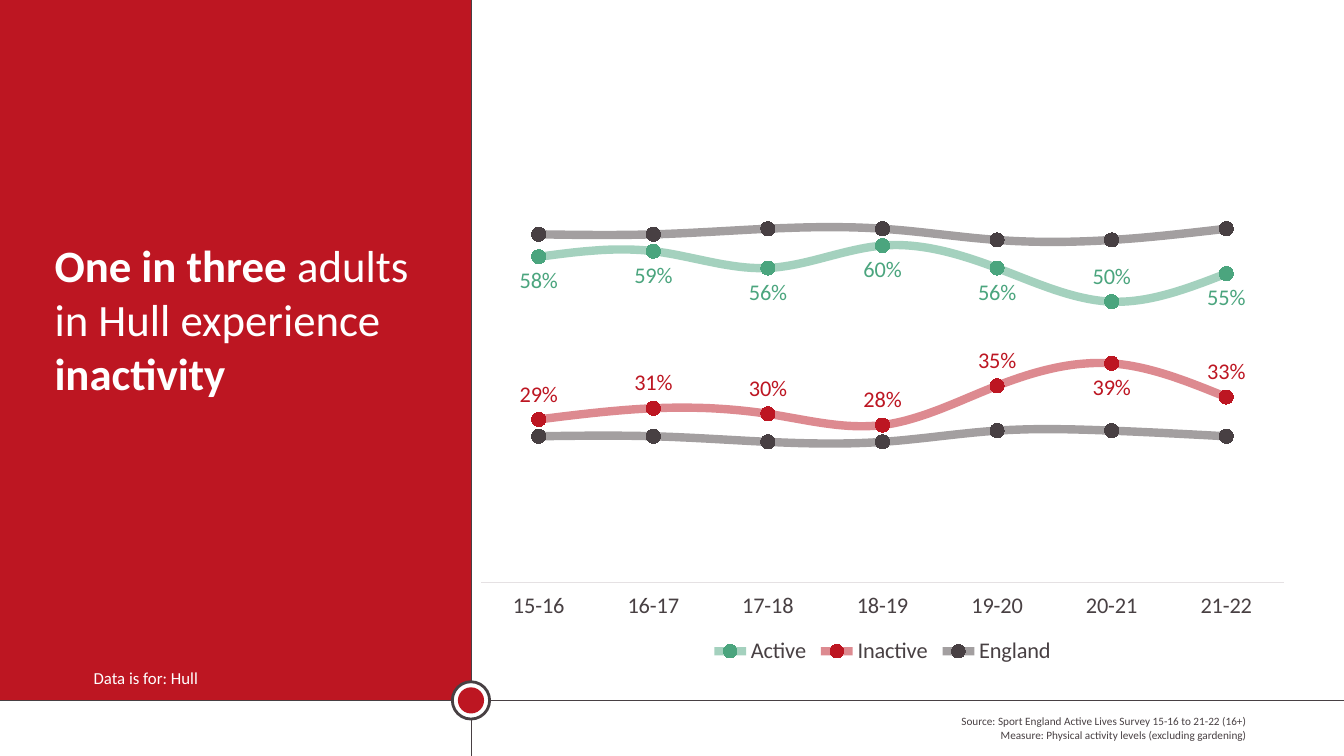
"""Build the Hull adult activity levels slide."""
from lxml.etree import SubElement
from pptx import Presentation
from pptx.chart.data import CategoryChartData
from pptx.dml.color import RGBColor
from pptx.enum.chart import (XL_CHART_TYPE, XL_LABEL_POSITION, XL_LEGEND_POSITION,
                             XL_MARKER_STYLE, XL_TICK_LABEL_POSITION, XL_TICK_MARK)
from pptx.enum.shapes import MSO_CONNECTOR, MSO_SHAPE
from pptx.enum.text import MSO_ANCHOR, MSO_AUTO_SIZE, PP_ALIGN
from pptx.oxml import parse_xml
from pptx.oxml.ns import nsdecls, qn
from pptx.util import Cm, Pt

COLORS = {"red": "BD1622", "green": "4BA57E", "dark": "484043",
          "pale": "E5E1E3", "white": "FFFFFF"}
FONT = "Calibri"
WIDTH, HEIGHT = 33.87, 19.05
CROSS_X, CROSS_Y = 11.87, 17.65

HEADLINE = [("One in three ", True), ("adults in Hull experience ", False),
            ("inactivity", True)]
NOTES = [
    (["Source: Sport England Active Lives Survey 15-16 to 21-22 (16+)",
      "Measure: Physical activity levels (excluding gardening)"],
     (15.24, 17.88, 16.43, 0.94), 8, "dark", PP_ALIGN.RIGHT),
    (["Data is for: Hull"], (2.11, 16.71, 9.22, 0.76), 12, "white", PP_ALIGN.LEFT),
]
RULES = [(CROSS_X, 0, CROSS_X, HEIGHT), (0, CROSS_Y, WIDTH, CROSS_Y)]
RINGS = [(0.94, "white", "dark"), (0.66, "red", None)]

YEARS = ["15-16", "16-17", "17-18", "18-19", "19-20", "20-21", "21-22"]
ABOVE, BELOW = XL_LABEL_POSITION.ABOVE, XL_LABEL_POSITION.BELOW
SERIES = [
    ("Active", [0.58, 0.59, 0.56, 0.6, 0.56, 0.5, 0.55], "green", (BELOW, ABOVE)),
    ("Inactive", [0.29, 0.31, 0.3, 0.28, 0.35, 0.39, 0.33], "red", (ABOVE, BELOW)),
    ("England", [0.26, 0.26, 0.25, 0.25, 0.27, 0.27, 0.26], "dark", None),
    ("Series 4", [0.62, 0.62, 0.63, 0.63, 0.61, 0.61, 0.63], "dark", None),
]
FLIPPED_POINT = YEARS.index("20-21")
UNLISTED_SERIES = 3
PLOT_AREA = {"x": 0, "y": 0.01, "w": 1, "h": 0.82}


def rgb(name):
    return RGBColor.from_string(COLORS[name])


def set_values(target, values):
    for name, value in values.items():
        setattr(target, name, value)


def style_font(font, size, color, bold=False):
    set_values(font, {"name": FONT, "size": Pt(size), "bold": bold})
    font.color.rgb = rgb(color)


def add_filled(slide, kind, box, fill, outline=None):
    shape = slide.shapes.add_shape(kind, *map(Cm, box))
    shape.shadow.inherit = False
    shape.fill.solid()
    shape.fill.fore_color.rgb = rgb(fill)
    if outline:
        shape.line.color.rgb = rgb(outline)
        shape.line.width = Pt(2)
    else:
        shape.line.fill.background()


def add_backdrop(slide):
    add_filled(slide, MSO_SHAPE.RECTANGLE, (0, 0, CROSS_X, CROSS_Y), "red")
    for ends in RULES:
        rule = slide.shapes.add_connector(MSO_CONNECTOR.STRAIGHT, *map(Cm, ends))
        rule.line.color.rgb = rgb("dark")
        rule.line.width = Pt(0.5)
        SubElement(rule.element.spPr, qn("a:effectLst"))
    for diameter, fill, outline in RINGS:
        corner = (CROSS_X - diameter / 2, CROSS_Y - diameter / 2)
        add_filled(slide, MSO_SHAPE.OVAL, (*corner, diameter, diameter), fill, outline)


def add_note(slide, lines, box, size, color, alignment):
    frame = slide.shapes.add_textbox(*map(Cm, box)).text_frame
    frame.word_wrap = True
    frame.text = "\n".join(lines)
    for paragraph in frame.paragraphs:
        paragraph.alignment = alignment
        style_font(paragraph.font, size, color)


def fill_title(slide):
    title = slide.shapes.title
    set_values(title, {"left": Cm(1.12), "top": Cm(5.87),
                       "width": Cm(9.45), "height": Cm(8.61)})
    set_values(title.text_frame, {"word_wrap": True, "auto_size": MSO_AUTO_SIZE.NONE,
                                  "vertical_anchor": MSO_ANCHOR.TOP})
    paragraph = title.text_frame.paragraphs[0]
    paragraph.alignment = PP_ALIGN.LEFT
    for text, bold in HEADLINE:
        run = paragraph.add_run()
        run.text = text
        style_font(run.font, 32, "white", bold)
    title.element.getparent().append(title.element)


def style_series(series, color, positions):
    series.smooth = True
    series.format.line.color.rgb = rgb(color)
    series.format.line.width = Pt(6)
    line_color = next(series.format.line.fill._xPr.iter(qn("a:srgbClr")))
    SubElement(line_color, qn("a:alpha"), val="50000")
    set_values(series.marker, {"style": XL_MARKER_STYLE.CIRCLE, "size": 10})
    series.marker.format.fill.solid()
    series.marker.format.fill.fore_color.rgb = rgb(color)
    series.marker.format.line.color.rgb = rgb(color)
    if positions:
        usual, flipped = positions
        labels = series.data_labels
        set_values(labels, {"show_value": True, "number_format": "0%",
                            "number_format_is_linked": False, "position": usual})
        style_font(labels.font, 16, color)
        label = series.points[FLIPPED_POINT].data_label
        style_font(label.font, 16, color)
        label.position = flipped


def place_plot(chart):
    plot_area = chart.element.find(".//" + qn("c:plotArea"))
    for layout in plot_area.findall(qn("c:layout")):
        plot_area.remove(layout)
    modes = "".join(f'<c:{side}Mode val="edge"/>' for side in "xy")
    sizes = "".join(f'<c:{side} val="{value}"/>' for side, value in PLOT_AREA.items())
    plot_area.insert(0, parse_xml(
        f'<c:layout {nsdecls("c")}><c:manualLayout><c:layoutTarget val="inner"/>'
        f'{modes}{sizes}</c:manualLayout></c:layout>'))


def add_activity_chart(slide):
    data = CategoryChartData(number_format="0%")
    data.categories = YEARS
    for name, values, *_ in SERIES:
        data.add_series(name, values)
    box = map(Cm, (12.12, 3.94, 20.24, 12.93))
    chart = slide.shapes.add_chart(XL_CHART_TYPE.LINE_MARKERS, *box, data).chart
    set_values(chart, {"has_title": False, "has_legend": True})
    style_font(chart.font, 16, "dark")
    chart.plots[0].vary_by_categories = False
    for series, (_, _, color, positions) in zip(chart.plots[0].series, SERIES):
        style_series(series, color, positions)

    set_values(chart.value_axis, {"minimum_scale": 0, "maximum_scale": 0.75,
                                  "has_major_gridlines": False, "visible": False})
    years = chart.category_axis
    set_values(years, {"major_tick_mark": XL_TICK_MARK.NONE,
                       "minor_tick_mark": XL_TICK_MARK.NONE,
                       "tick_label_position": XL_TICK_LABEL_POSITION.LOW})
    style_font(years.tick_labels.font, 16, "dark")
    years.format.line.color.rgb = rgb("pale")
    years.format.line.width = Pt(0.75)

    legend = chart.legend
    set_values(legend, {"position": XL_LEGEND_POSITION.BOTTOM,
                        "include_in_layout": False})
    style_font(legend.font, 16, "dark")
    chart.element.find(".//" + qn("c:legendPos")).addnext(parse_xml(
        f'<c:legendEntry {nsdecls("c")}><c:idx val="{UNLISTED_SERIES}"/>'
        '<c:delete val="1"/></c:legendEntry>'))
    place_plot(chart)


def main():
    presentation = Presentation()
    set_values(presentation, {"slide_width": Cm(WIDTH), "slide_height": Cm(HEIGHT)})
    slide = presentation.slides.add_slide(presentation.slide_layouts[5])
    add_backdrop(slide)
    for note in NOTES:
        add_note(slide, *note)
    fill_title(slide)
    add_activity_chart(slide)
    presentation.save("out.pptx")


if __name__ == "__main__":
    main()
